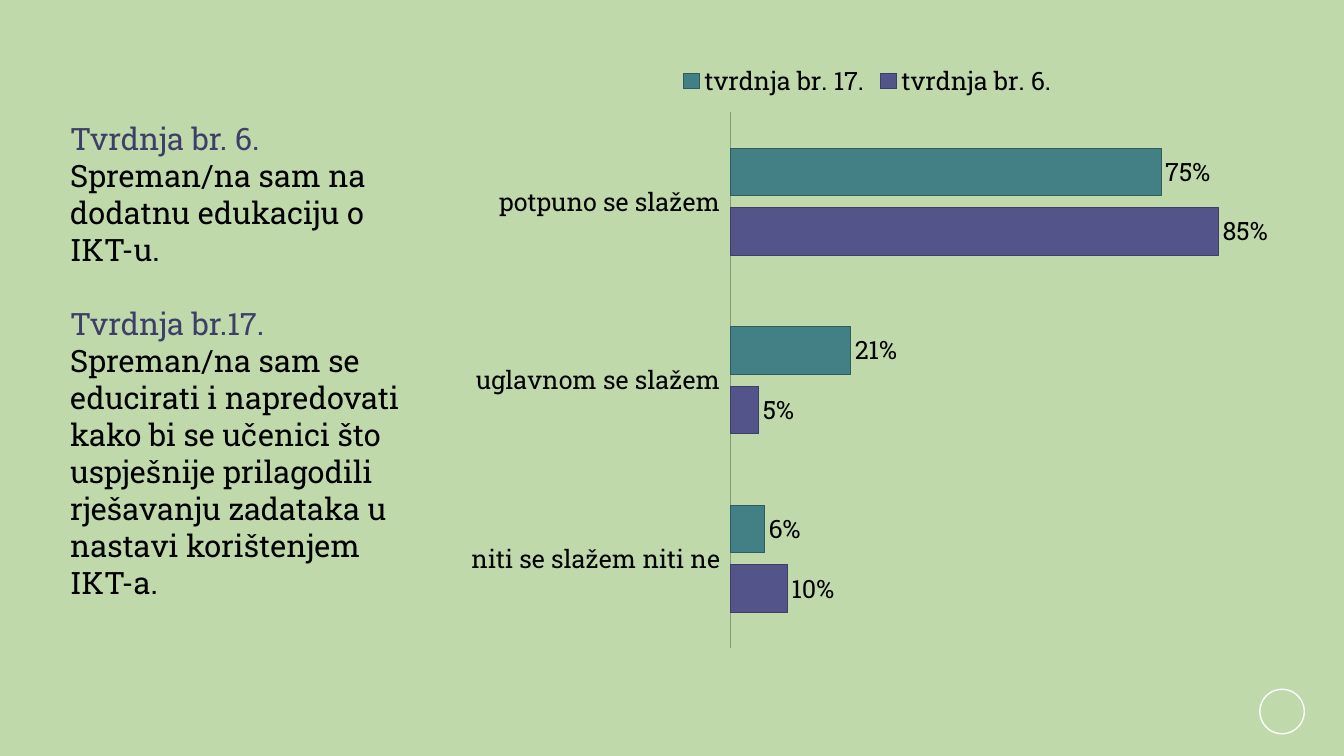
from pptx import Presentation
from pptx.chart.data import CategoryChartData
from pptx.dml.color import RGBColor
from pptx.enum.chart import (XL_CHART_TYPE, XL_LABEL_POSITION,
                             XL_LEGEND_POSITION, XL_TICK_LABEL_POSITION,
                             XL_TICK_MARK)
from pptx.enum.shapes import MSO_SHAPE
from pptx.oxml import parse_xml
from pptx.oxml.ns import nsdecls
from pptx.util import Cm, Pt

GREEN = RGBColor(0xBF, 0xD9, 0xAB)
TEAL = RGBColor(0x43, 0x80, 0x86)
PURPLE = RGBColor(0x53, 0x54, 0x8A)
PINE = RGBColor(0x2F, 0x5C, 0x60)
INDIGO = RGBColor(0x3E, 0x3F, 0x68)
MOSS = RGBColor(0x7F, 0x9F, 0x70)
BLACK = RGBColor(0, 0, 0)
WHITE = RGBColor(0xFF, 0xFF, 0xFF)

FACE = "Roboto Slab"
CLAIMS = [
    ("Tvrdnja br. 6. ", "Spreman/na sam na dodatnu edukaciju o IKT-u."),
    ("Tvrdnja br.17. ", "Spreman/na sam se educirati i napredovati kako bi se "
     "učenici što uspješnije prilagodili rješavanju zadataka u nastavi "
     "korištenjem IKT-a."),
]
LEVELS = ["niti se slažem niti ne", "uglavnom se slažem", "potpuno se slažem"]
SERIES = [
    ("tvrdnja br. 6.", (0.1, 0.05, 0.85), PURPLE, INDIGO),
    ("tvrdnja br. 17.", (0.06, 0.21, 0.75), TEAL, PINE),
]
PLOT = {"x": 0.33, "y": 0.1, "w": 0.64, "h": 0.88}


def style(item, **values):
    """Set each given value as an attribute of item."""
    for name, value in values.items():
        setattr(item, name, value)


def set_font(font, size, color):
    style(font, name=FACE, size=Pt(size))
    font.color.rgb = color


def add_claims(slide, box):
    frame = slide.shapes.add_textbox(*box).text_frame
    frame.word_wrap = True
    for i, claim in enumerate(CLAIMS):
        para = frame.add_paragraph() if i else frame.paragraphs[0]
        if i:
            para.space_before = Pt(26.4)
        for text, color in zip(claim, (INDIGO, BLACK)):
            run = para.add_run()
            run.text = text
            set_font(run.font, 22, color)


def set_plot(chart):
    """Fix the inner plot area as fractions of the chart."""
    area = chart._chartSpace.chart.plotArea
    for old in area.findall(area.tag.replace("plotArea", "layout")):
        area.remove(old)
    modes = "".join(f'<c:{k}Mode val="edge"/>' for k in "xy")
    sizes = "".join(f'<c:{k} val="{v}"/>' for k, v in PLOT.items())
    area.insert(0, parse_xml(
        f'<c:layout {nsdecls("c")}><c:manualLayout>'
        f'<c:layoutTarget val="inner"/>{modes}{sizes}'
        f'</c:manualLayout></c:layout>'))


def add_bars(slide, box):
    data = CategoryChartData(number_format="0%")
    data.categories = LEVELS
    for name, values, *_ in SERIES:
        data.add_series(name, values)
    chart = slide.shapes.add_chart(
        XL_CHART_TYPE.BAR_CLUSTERED, *box, data).chart
    set_font(chart.font, 18, BLACK)
    style(chart, has_title=False, has_legend=True)
    style(chart.legend, position=XL_LEGEND_POSITION.TOP,
          include_in_layout=False)
    set_font(chart.legend.font, 18, BLACK)
    set_plot(chart)

    none = XL_TICK_MARK.NONE
    axis = chart.category_axis
    style(axis, major_tick_mark=none, minor_tick_mark=none,
          tick_label_position=XL_TICK_LABEL_POSITION.LOW)
    set_font(axis.tick_labels.font, 18, BLACK)
    axis.format.line.width = Pt(0.75)
    axis.format.line.color.rgb = MOSS
    style(chart.value_axis, visible=False, has_major_gridlines=False,
          minimum_scale=0, maximum_scale=0.9)

    plot = chart.plots[0]
    style(plot, gap_width=150, overlap=-25, vary_by_categories=False)
    for bars, (_, _, color, edge) in zip(plot.series, SERIES):
        bars.format.fill.solid()
        bars.format.fill.fore_color.rgb = color
        bars.format.line.width = Pt(0.75)
        bars.format.line.color.rgb = edge
        labels = bars.data_labels
        style(labels, show_value=True, number_format="0%",
              number_format_is_linked=False,
              position=XL_LABEL_POSITION.OUTSIDE_END)
        set_font(labels.font, 18, BLACK)


def add_ring(slide, box):
    ring = slide.shapes.add_shape(MSO_SHAPE.OVAL, *box)
    ring.shadow.inherit = False
    ring.fill.background()
    ring.line.width = Pt(1)
    ring.line.color.rgb = WHITE


def main():
    deck = Presentation()
    style(deck, slide_width=Cm(33.87), slide_height=Cm(19.05))
    slide = deck.slides.add_slide(deck.slide_layouts[6])
    slide.background.fill.solid()
    slide.background.fill.fore_color.rgb = GREEN
    add_ring(slide, (Cm(31.75), Cm(17.37), Cm(1.12), Cm(1.12)))
    add_bars(slide, (Cm(11.68), Cm(1.3), Cm(20.37), Cm(15.34)))
    add_claims(slide, (Cm(1.52), Cm(2.9), Cm(9.53), Cm(12.47)))
    deck.save("out.pptx")


if __name__ == "__main__":
    main()
